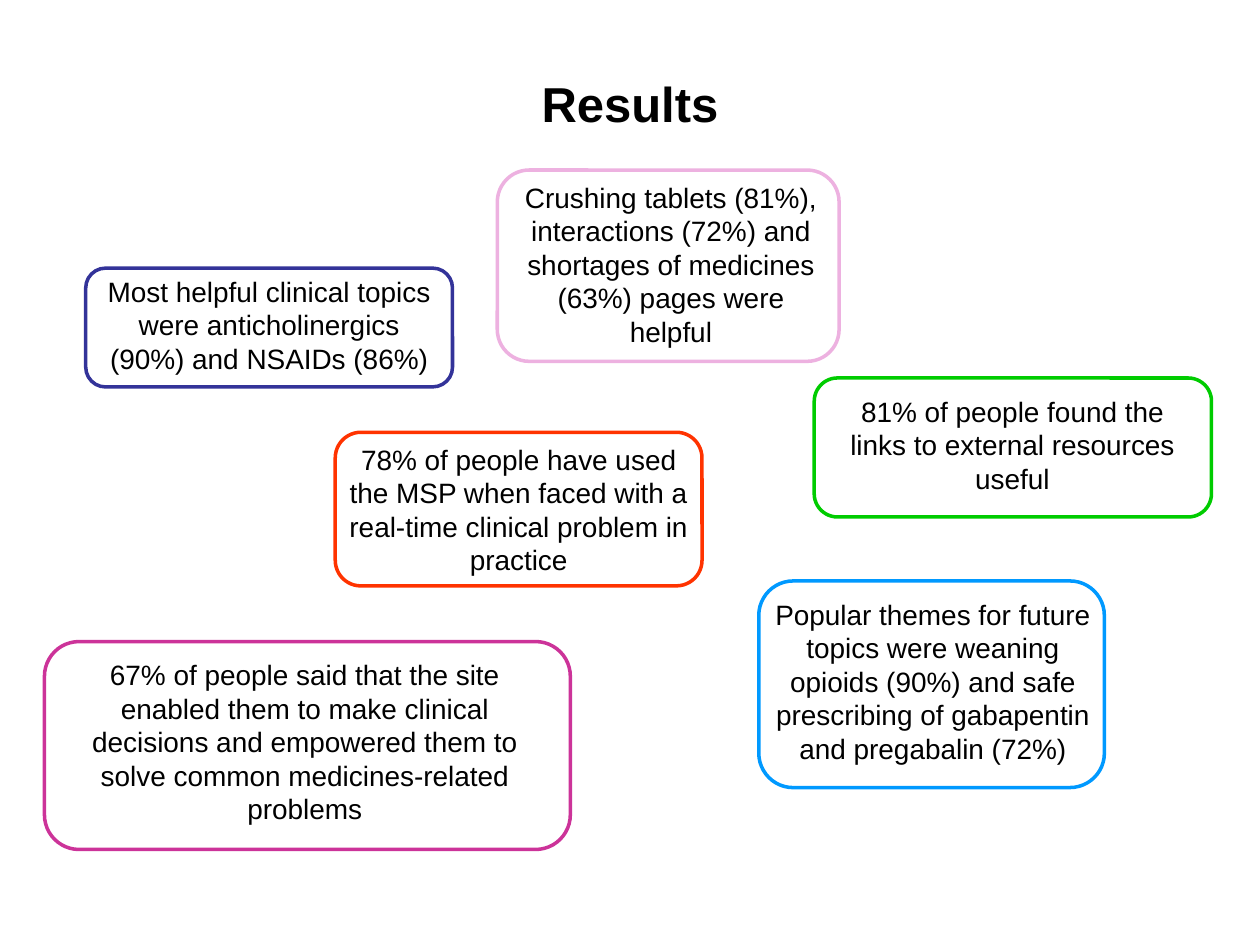
from dataclasses import dataclass

from pptx import Presentation
from pptx import util as u
from pptx.dml.color import RGBColor
from pptx.enum import shapes, text


@dataclass(frozen=True)
class Theme:
    font: str = "Arial"
    title_size: int = 28
    body_size: int = 16
    leading: float = 1.2
    outline: int = 2
    ink: str = "000000"
    paper: str = "FFFFFF"
    navy: str = "333399"
    pink: str = "EDB1E0"
    green: str = "00CC00"
    red: str = "FF3300"
    magenta: str = "CC3399"
    blue: str = "0099FF"


class ResultsSlide:
    def __init__(self, deck, theme):
        self.theme = theme
        self.page = deck.slides.add_slide(deck.slide_layouts[5])

    def place(self, frame):
        return [u.Pt(length) for length in frame]

    def set_wording(self, box, wording, size, bold=False):
        frame = box.text_frame
        frame.text = wording
        frame.word_wrap = True
        frame.vertical_anchor = text.MSO_ANCHOR.TOP
        frame.auto_size = text.MSO_AUTO_SIZE.SHAPE_TO_FIT_TEXT
        para = frame.paragraphs[0]
        para.alignment = text.PP_ALIGN.CENTER
        para.line_spacing = u.Pt(size * self.theme.leading)
        para.font.name = self.theme.font
        para.font.size = u.Pt(size)
        para.font.bold = bold
        para.font.color.rgb = RGBColor.from_string(self.theme.ink)

    def title(self, wording, frame):
        box = self.page.shapes.title
        box.left, box.top, box.width, box.height = self.place(frame)
        self.set_wording(box, wording, self.theme.title_size, bold=True)

    def finding(self, wording, color, card_frame, text_frame, grouped=False):
        target = self.page.shapes
        if grouped:
            target = target.add_group_shape().shapes
        card = target.add_shape(
            shapes.MSO_SHAPE.FLOWCHART_ALTERNATE_PROCESS, *self.place(card_frame))
        card.shadow.inherit = False
        card.fill.solid()
        card.fill.fore_color.rgb = RGBColor.from_string(self.theme.paper)
        card.line.color.rgb = RGBColor.from_string(color)
        card.line.width = u.Pt(self.theme.outline)
        label = target.add_textbox(*self.place(text_frame))
        self.set_wording(label, wording, self.theme.body_size)


def main():
    theme = Theme()
    deck = Presentation()
    deck.slide_width, deck.slide_height = u.Pt(720), u.Pt(540)
    slide = ResultsSlide(deck, theme)
    slide.title("Results", (48, 38.2, 624, 41))

    findings = [
        ("Most helpful clinical topics were anticholinergics (90%) and NSAIDs (86%)",
         theme.navy, (49, 153.2, 209.6, 67.9), (49, 153.2, 209.6, 97.9), True),
        ("Crushing tablets (81%), interactions (72%) and shortages of medicines "
         "(63%) pages were helpful",
         theme.pink, (284.2, 97.2, 195.3, 109.3), (287.3, 99.4, 192.2, 136.8), True),
        ("81% of people found the links to external resources useful",
         theme.green, (465.3, 216, 227, 79.4), (470.9, 221.8, 215.3, 97.9), False),
        ("78% of people have used the MSP when faced with a real-time clinical "
         "problem in practice",
         theme.red, (191.6, 247, 209.6, 87.8), (191.6, 249.1, 209.6, 117.4), True),
        ("67% of people said that the site enabled them to make clinical decisions "
         "and empowered them to solve common medicines-related problems",
         theme.magenta, (25.4, 366.6, 300.5, 118.8), (41, 372.2, 266.4, 136.8), False),
        ("Popular themes for future topics were weaning opioids (90%) and safe "
         "prescribing of gabapentin and pregabalin (72%)",
         theme.blue, (433.6, 332, 197.5, 118.1), (433.4, 337.7, 199.4, 136.8), False),
    ]
    for finding in findings:
        slide.finding(*finding)

    deck.save("out.pptx")


if __name__ == "__main__":
    main()
